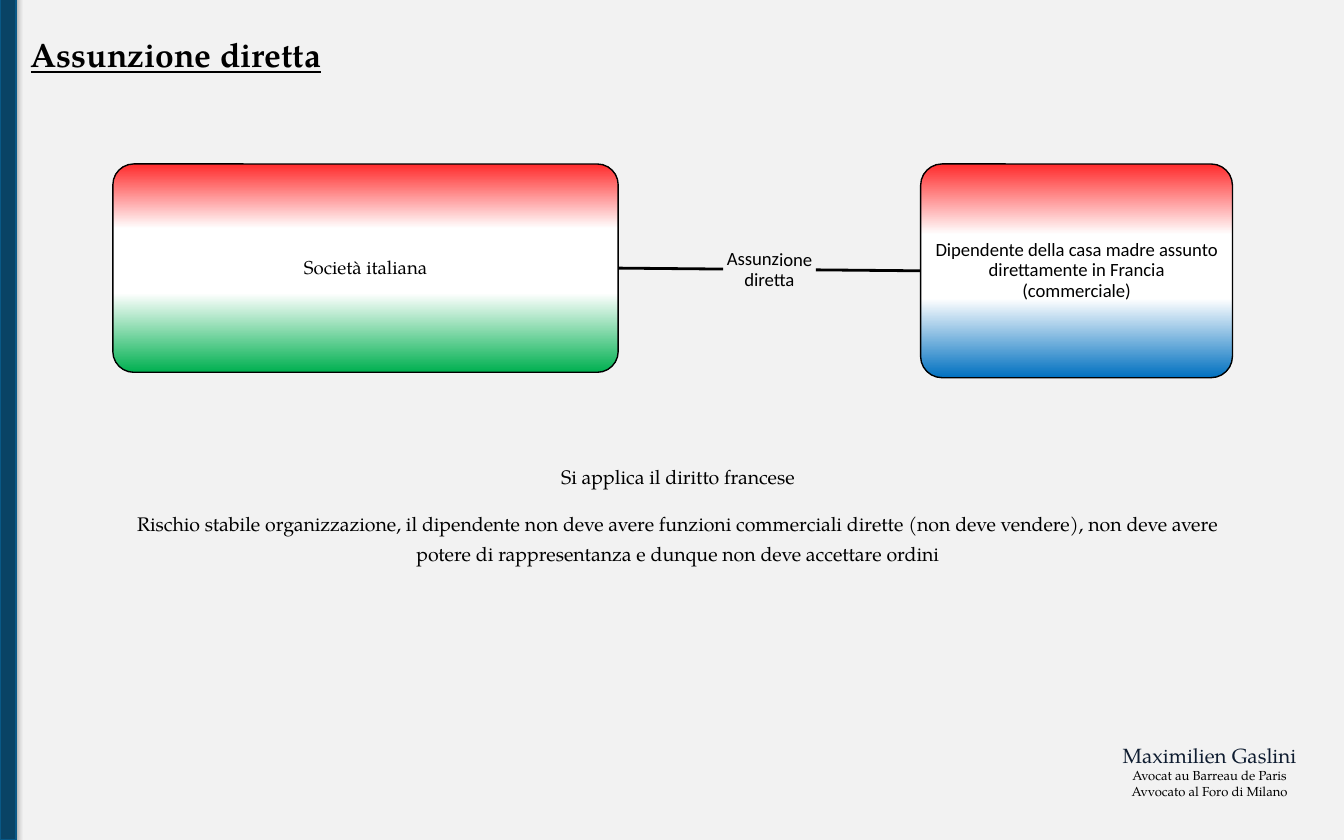
import dataclasses

import pptx
import pptx.dml.color
import pptx.enum.shapes
import pptx.enum.text
import pptx.oxml
import pptx.oxml.ns
import pptx.util

COLUMNS, ROWS = 100, 62.5
CELL = pptx.util.Inches(0.1)
SHAPE = pptx.enum.shapes.MSO_SHAPE
ANCHOR = pptx.enum.text.MSO_ANCHOR


@dataclasses.dataclass(frozen=True)
class Theme:
    serif: str = "TeX Gyre Pagella"
    sans: str = "Calibri"
    paper: str = "F2F2F2"
    ink: str = "000000"
    navy: str = "0E1C30"
    bar: str = "094365"
    bar_edge: str = "095886"
    red: str = "FF2B2C"
    white: str = "FFFFFF"
    green: str = "00B050"
    blue: str = "0070C0"
    title: float = 18
    name: float = 11
    body: float = 10.5
    box: float = 10
    small: float = 7


T = Theme()


def rgb(value):
    return pptx.dml.color.RGBColor.from_string(value)


def cells(*counts):
    return [round(n * CELL) for n in counts]


def add_xml(sp, xml):
    element = pptx.oxml.parse_xml(xml.replace(">", " " + pptx.oxml.ns.nsdecls("a") + ">", 1))
    sp._element.spPr.append(element)


def set_line(sp, color, width):
    sp.line.color.rgb = rgb(color)
    sp.line.width = pptx.util.Pt(width)


def add_paragraph(tf, text, size, font=T.serif, color=T.ink, bold=False,
                  underline=False, before=0, spacing=1.0):
    p = tf.paragraphs[0]
    if p.runs:
        p = tf.add_paragraph()
    p.alignment = pptx.enum.text.PP_ALIGN.CENTER
    p.space_before = pptx.util.Pt(before)
    p.line_spacing = spacing
    r = p.add_run()
    r.text = text
    r.font.name = font
    r.font.size = pptx.util.Pt(size)
    r.font.color.rgb = rgb(color)
    r.font.bold = bold
    r.font.underline = underline


def set_frame(sp, inset_x, inset_y, wrap=True, anchor=ANCHOR.TOP):
    tf = sp.text_frame
    tf.word_wrap = wrap
    tf.vertical_anchor = anchor
    tf.margin_left = tf.margin_right = cells(inset_x)[0]
    tf.margin_top = tf.margin_bottom = cells(inset_y)[0]
    return tf


def add_text(s, place, inset_x=1, inset_y=0.5, **frame):
    sp = s.shapes.add_textbox(*cells(*place))
    return sp, set_frame(sp, inset_x, inset_y, **frame)


def add_flag_box(s, place, stops, text, font):
    sp = s.shapes.add_shape(SHAPE.ROUNDED_RECTANGLE, *cells(*place))
    sp.adjustments[0] = 0.1
    gradient = "".join(
        f'<a:gs pos="{pos * 1000}"><a:srgbClr val="{color}"/></a:gs>' for pos, color in stops)
    add_xml(sp, f'<a:gradFill rotWithShape="1"><a:gsLst>{gradient}</a:gsLst>'
                '<a:lin ang="16200000" scaled="0"/></a:gradFill>')
    set_line(sp, T.ink, 0.75)
    sp.shadow.inherit = False
    tf = set_frame(sp, 0.5, 0.5, anchor=ANCHOR.MIDDLE)
    add_paragraph(tf, text, T.box, font, spacing=0.9)


def add_link(s, *ends):
    line = s.shapes.add_connector(pptx.enum.shapes.MSO_CONNECTOR.STRAIGHT, *cells(*ends))
    set_line(line, T.ink, 1.5)
    add_xml(line, "<a:effectLst></a:effectLst>")


def add_side_bar(s):
    sp = s.shapes.add_shape(SHAPE.RECTANGLE, *cells(0, -1, 1.2, ROWS + 1))
    sp.fill.solid()
    sp.fill.fore_color.rgb = rgb(T.bar)
    set_line(sp, T.bar_edge, 0.75)
    add_xml(sp, '<a:effectLst><a:outerShdw blurRad="39370" dist="22860" dir="5400000" '
                f'rotWithShape="0"><a:srgbClr val="{T.ink}"><a:alpha val="35000"/>'
                '</a:srgbClr></a:outerShdw></a:effectLst>')


def add_diagram(s):
    add_flag_box(s, (8.4, 12.2, 37.6, 15.5),
                 [(0, T.green), (38, T.white), (69, T.white), (100, T.red)],
                 "Società italiana", T.serif)
    add_link(s, 46, 19.95, 53.8, 20.02)
    add_link(s, 60.7, 20.08, 68.5, 20.15)
    label, tf = add_text(s, (53.8, 17.3, 6.9, 5.6), 0.1, 0, anchor=ANCHOR.MIDDLE)
    label.rotation = 0.5
    add_paragraph(tf, "Assunzione diretta", T.box, T.sans, spacing=0.9)
    add_flag_box(s, (68.5, 12.2, 23.2, 15.9),
                 [(0, T.blue), (37, T.white), (67, T.white), (100, T.red)],
                 "Dipendente della casa madre assunto direttamente in Francia (commerciale)",
                 T.sans)


def add_title(s):
    _, tf = add_text(s, (1.2, 2, 23.8, 7.1), wrap=False)
    add_paragraph(tf, "Assunzione diretta", T.title, bold=True, underline=True)


def add_signature(s):
    _, tf = add_text(s, (82.6, 54.9, 14.8, 5), 0.8, 0.4, wrap=False)
    add_paragraph(tf, "Maximilien Gaslini", T.name, color=T.navy)
    for text in ("Avocat au Barreau de Paris", "Avvocato al Foro di Milano"):
        add_paragraph(tf, text, T.small)


def add_notes_on_law(s):
    _, tf = add_text(s, (3.5, 34.1, 93.9, 8.7))
    for text, before in (
        ("Si applica il diritto francese", 0),
        ("Rischio stabile organizzazione, il dipendente non deve avere funzioni "
         "commerciali dirette (non deve vendere), non deve avere", 12.5),
        ("potere di rappresentanza e dunque non deve accettare ordini", 3.5),
    ):
        add_paragraph(tf, text, T.body, before=before)


def main():
    prs = pptx.Presentation()
    prs.slide_width, prs.slide_height = cells(COLUMNS, ROWS)
    s = prs.slides.add_slide(prs.slide_layouts[6])
    s.background.fill.solid()
    s.background.fill.fore_color.rgb = rgb(T.paper)
    add_diagram(s)
    add_title(s)
    add_signature(s)
    add_notes_on_law(s)
    add_side_bar(s)
    prs.save("out.pptx")


if __name__ == "__main__":
    main()
